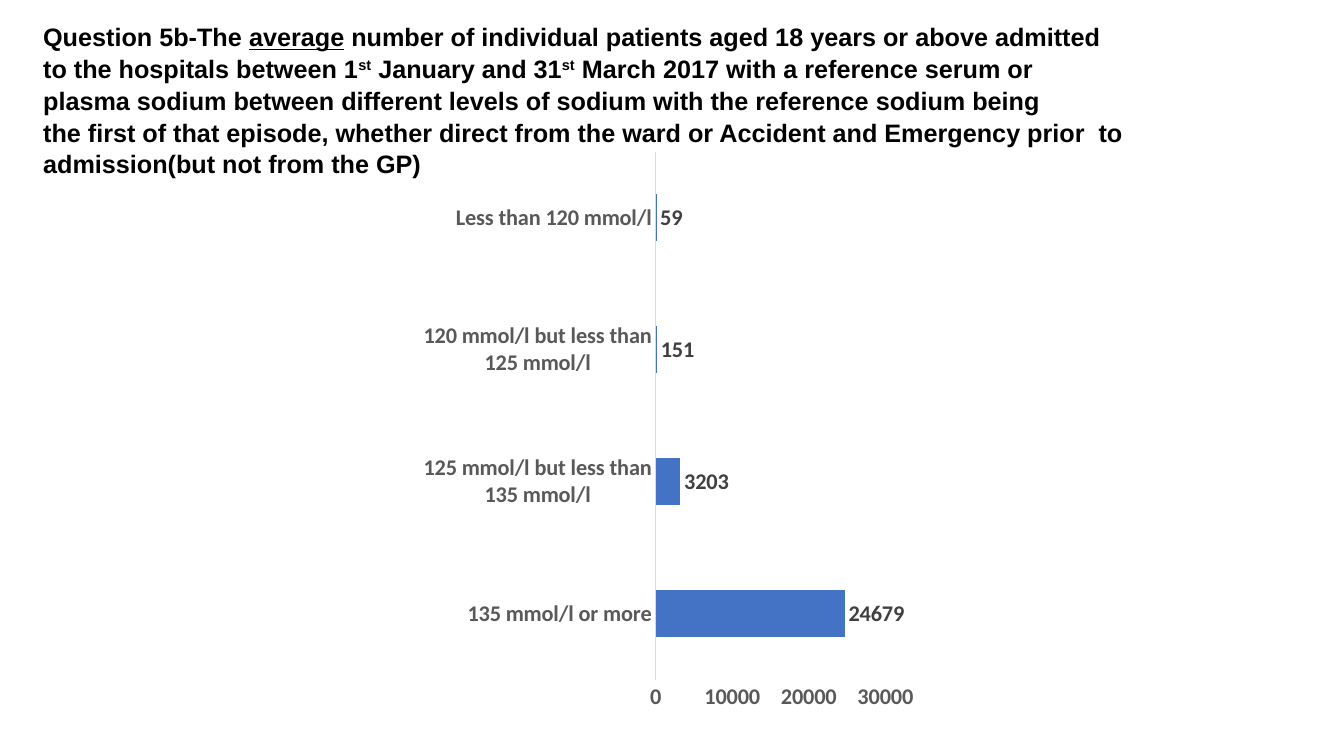
from dataclasses import dataclass

import pptx
import pptx.chart.data
import pptx.dml.color
import pptx.enum.chart
import pptx.enum.text
import pptx.oxml
import pptx.util
from lxml import etree

WIDTH = pptx.util.Inches(13.33)
HEIGHT = pptx.util.Inches(7.5)
COLOURS = {
    "question": "000000",
    "axis_text": "595959",
    "axis_line": "D9D9D9",
    "bar": "4472C4",
    "value": "404040",
}


@dataclass(frozen=True)
class Area:
    left: float
    top: float
    width: float
    height: float

    def box(self) -> tuple[int, int, int, int]:
        return (
            int(self.left / 13.33 * WIDTH),
            int(self.top / 7.5 * HEIGHT),
            int(self.width / 13.33 * WIDTH),
            int(self.height / 7.5 * HEIGHT),
        )


@dataclass(frozen=True)
class Piece:
    text: str
    underlined: bool = False
    raised: bool = False


@dataclass(frozen=True)
class SodiumLevel:
    label: str
    patients: int


QUESTION_AREA = Area(0.33, 0.15, 11.01, 1.95)
CHART_AREA = Area(4.2, 1.5, 5, 5.9)
PLOT_SHARES = {"x": 0.459, "y": 0.0, "w": 0.457, "h": 0.889}
ORDINAL = Piece("st", raised=True)
QUESTION = [
    [
        Piece("Question 5b-The "),
        Piece("average", underlined=True),
        Piece(" number of individual patients aged 18 years or above admitted"),
    ],
    [
        Piece("to the hospitals between 1"),
        ORDINAL,
        Piece(" January and 31"),
        ORDINAL,
        Piece(" March 2017 with a reference serum or"),
    ],
    [Piece("plasma sodium between different levels of sodium with the reference sodium being")],
    [
        Piece(
            "the first of that episode, whether direct from the ward or Accident and "
            "Emergency prior  to admission(but not from the GP)"
        )
    ],
]
LEVELS = [
    SodiumLevel("135 mmol/l or more", 24679),
    SodiumLevel("125 mmol/l but less than 135 mmol/l", 3203),
    SodiumLevel("120 mmol/l but less than 125 mmol/l", 151),
    SodiumLevel("Less than 120 mmol/l", 59),
]


def colour(role: str) -> pptx.dml.color.RGBColor:
    return pptx.dml.color.RGBColor.from_string(COLOURS[role])


def style_font(font, face: str, size: int, role: str) -> None:
    font.name = face
    font.size = pptx.util.Pt(size)
    font.bold = True
    font.color.rgb = colour(role)


def add_question(slide) -> None:
    frame = slide.shapes.add_textbox(*QUESTION_AREA.box()).text_frame
    frame.word_wrap = True
    frame.auto_size = pptx.enum.text.MSO_AUTO_SIZE.SHAPE_TO_FIT_TEXT
    for index, pieces in enumerate(QUESTION):
        paragraph = frame.add_paragraph() if index else frame.paragraphs[0]
        paragraph.line_spacing = 1.05
        for piece in pieces:
            run = paragraph.add_run()
            run.text = piece.text
            style_font(run.font, "Arial", 18, "question")
            if piece.underlined:
                run.font.underline = True
            if piece.raised:
                run._r.get_or_add_rPr().set("baseline", "30000")


def style_axis(axis) -> None:
    axis.has_major_gridlines = False
    axis.major_tick_mark = pptx.enum.chart.XL_TICK_MARK.NONE
    axis.minor_tick_mark = pptx.enum.chart.XL_TICK_MARK.NONE
    style_font(axis.tick_labels.font, "Calibri", 16, "axis_text")


def place_plot(chart) -> None:
    plot_area = chart._chartSpace.chart.plotArea
    for automatic in plot_area.findall(pptx.oxml.ns.qn("c:layout")):
        plot_area.remove(automatic)
    layout = etree.Element(pptx.oxml.ns.qn("c:layout"))
    manual = etree.SubElement(layout, pptx.oxml.ns.qn("c:manualLayout"))
    settings = {"layoutTarget": "inner", "xMode": "edge", "yMode": "edge", **PLOT_SHARES}
    for tag, value in settings.items():
        etree.SubElement(manual, pptx.oxml.ns.qn(f"c:{tag}")).set("val", str(value))
    plot_area.insert(0, layout)


def add_patients_chart(slide) -> None:
    patients = pptx.chart.data.CategoryChartData(number_format="General")
    patients.categories = [level.label for level in LEVELS]
    patients.add_series("Series 1", [level.patients for level in LEVELS])
    chart = slide.shapes.add_chart(
        pptx.enum.chart.XL_CHART_TYPE.BAR_CLUSTERED, *CHART_AREA.box(), patients
    ).chart
    chart.has_legend = False
    chart.has_title = False
    style_font(chart.font, "Calibri", 12, "question")

    levels_axis, count_axis = chart.category_axis, chart.value_axis
    for axis in (levels_axis, count_axis):
        style_axis(axis)
    levels_axis.format.line.color.rgb = colour("axis_line")
    levels_axis.format.line.width = pptx.util.Pt(0.75)
    count_axis.format.line.fill.background()
    count_axis.minimum_scale = 0
    count_axis.maximum_scale = 30000
    count_axis.major_unit = 10000

    bars = chart.plots[0]
    bars.gap_width = 182
    bars.vary_by_categories = False
    series = bars.series[0]
    series.invert_if_negative = False
    series.format.fill.solid()
    series.format.fill.fore_color.rgb = colour("bar")
    labels = series.data_labels
    labels.show_value = True
    labels.position = pptx.enum.chart.XL_LABEL_POSITION.OUTSIDE_END
    style_font(labels.font, "Calibri", 16, "value")
    place_plot(chart)


def main() -> None:
    deck = pptx.Presentation()
    deck.slide_width, deck.slide_height = WIDTH, HEIGHT
    slide = deck.slides.add_slide(deck.slide_layouts[6])
    add_question(slide)
    add_patients_chart(slide)
    deck.save("out.pptx")


if __name__ == "__main__":
    main()
